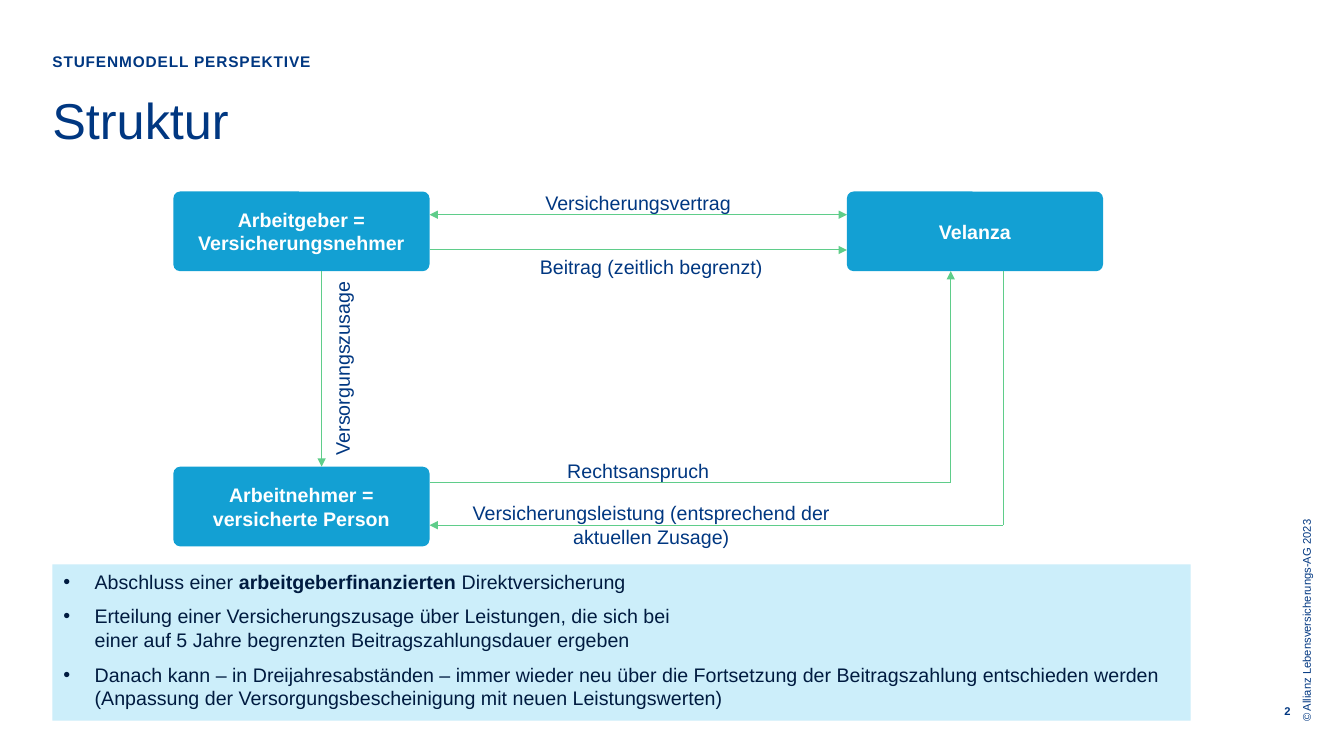
import dataclasses
import lxml.etree
import pptx
import pptx.dml.color
import pptx.enum.shapes
import pptx.enum.text
import pptx.oxml.ns
import pptx.util

Inches = pptx.util.Inches
Pt = pptx.util.Pt
Kind = pptx.enum.shapes.MSO_SHAPE
Align = pptx.enum.text.PP_ALIGN
Anchor = pptx.enum.text.MSO_ANCHOR
qn = pptx.oxml.ns.qn


@dataclasses.dataclass(frozen=True)
class Theme:
    """Colours, font and type sizes of the slide."""
    font: str = "Arial"
    navy: str = "003781"
    ink: str = "001B40"
    white: str = "FFFFFF"
    node: str = "13A0D3"
    pale: str = "CCEEFA"
    line: str = "5FCD8A"
    title: int = 36
    body: int = 14
    kicker: int = 11
    small: int = 8


THEME = Theme()


def rgb(code):
    """Turn a hex code into a colour."""
    return pptx.dml.color.RGBColor.from_string(code)


def bullet(par):
    """Give a paragraph a hanging bullet."""
    props = par._p.get_or_add_pPr()
    props.set("marL", str(Inches(0.32)))
    props.set("indent", str(Inches(-0.31)))
    lxml.etree.SubElement(props, qn("a:buFont")).set("typeface", THEME.font)
    lxml.etree.SubElement(props, qn("a:buChar")).set("char", "•")


def write(shape, text, size=THEME.body, color=THEME.navy, bold=False,
          align=Align.LEFT, anchor=Anchor.TOP, pad=(0.1, 0.05), lead=None,
          space=0, marks=False, track=0):
    """Fill a shape with paragraphs, where ** switches bold and \\v breaks a line."""
    frame = shape.text_frame
    frame.word_wrap = True
    frame.vertical_anchor = anchor
    frame.margin_left = frame.margin_right = Inches(pad[0])
    frame.margin_top = frame.margin_bottom = Inches(pad[1])
    for num, part in enumerate(text.split("\n")):
        par = frame.add_paragraph() if num else frame.paragraphs[0]
        par.alignment = align
        if lead:
            par.line_spacing = Pt(lead)
        if space:
            par.space_after = Pt(space)
            if num:
                par.space_before = Pt(2)
        if marks:
            bullet(par)
        for turn, piece in enumerate(part.split("**")):
            for row, words in enumerate(piece.split("\v")):
                if row:
                    par.add_line_break()
                run = par.add_run()
                run.text = words
                run.font.name = THEME.font
                run.font.size = Pt(size)
                run.font.bold = bold or turn % 2 == 1
                run.font.color.rgb = rgb(color)
                if track:
                    run._r.get_or_add_rPr().set("spc", str(track))


def label(slide, box, text, turn=0, **form):
    """Add a text box."""
    shape = slide.shapes.add_textbox(*map(Inches, box))
    shape.rotation = turn
    write(shape, text, **form)


def panel(slide, box, text, kind, fill, **form):
    """Add a filled shape with text."""
    shape = slide.shapes.add_shape(kind, *map(Inches, box))
    shape.shadow.inherit = False
    shape.fill.solid()
    shape.fill.fore_color.rgb = rgb(fill)
    shape.line.fill.background()
    if kind == Kind.ROUNDED_RECTANGLE:
        shape.adjustments[0] = 0.084
    write(shape, text, **form)


def arrow(slide, start, end, *tips):
    """Draw a line with arrowheads at the named tips."""
    line = slide.shapes.add_connector(
        pptx.enum.shapes.MSO_CONNECTOR.STRAIGHT, *map(Inches, start + end))
    line.line.color.rgb = rgb(THEME.line)
    line.line.width = Pt(0.75)
    stroke = line.line._get_or_add_ln()
    for tip in tips:
        lxml.etree.SubElement(stroke, qn("a:" + tip)).set("type", "triangle")
    lxml.etree.SubElement(line._element.spPr, qn("a:effectLst"))


def header(slide, box):
    """Place the kicker and the title."""
    left, top, width, high = box
    label(slide, (left, top, width, 0.28), "STUFENMODELL PERSPEKTIVE",
          size=THEME.kicker, bold=True, pad=(0, 0), track=60)
    label(slide, (left, top + 0.44, width, high - 0.44), "Struktur",
          size=THEME.title, pad=(0, 0), lead=38)


def graph(slide, box):
    """Place the three parties, their links and the link labels."""
    left, top, width, high = box
    wide, tall = 2.54, 0.79
    edge, far = left + wide, left + width - wide
    base, low = top + tall, top + high - tall
    nodes = (
        (far, top, "Velanza"),
        (left, top, "Arbeitgeber =\nVersicherungsnehmer"),
        (left, low, "Arbeitnehmer =\nversicherte Person"),
    )
    for x, y, text in nodes:
        panel(slide, (x, y, wide, tall), text, Kind.ROUNDED_RECTANGLE,
              THEME.node, color=THEME.white, bold=True, align=Align.CENTER,
              anchor=Anchor.MIDDLE, pad=(0.09, 0.04))

    deal, fee = top + 0.23, top + 0.58
    claim, pay = low + 0.16, low + 0.58
    rise, drop, vow = far + 1.03, far + 1.55, left + 1.47
    arrow(slide, (edge, deal), (far, deal), "headEnd", "tailEnd")
    arrow(slide, (edge, fee), (far, fee), "tailEnd")
    arrow(slide, (vow, base), (vow, low), "tailEnd")
    arrow(slide, (edge, claim), (rise, claim))
    arrow(slide, (rise, claim), (rise, base), "tailEnd")
    arrow(slide, (drop, pay), (drop, base))
    arrow(slide, (edge, pay), (drop, pay), "headEnd")

    gap = far - edge
    labels = (
        ((edge, deal - 0.29, gap, 0.23), 0, "Versicherungsvertrag"),
        ((edge + 0.13, fee, gap, 0.34), 0, "Beitrag (zeitlich begrenzt)"),
        ((edge, claim - 0.29, gap, 0.23), 0, "Rechtsanspruch"),
        ((edge + 0.13, pay - 0.29, gap, 0.57), 0,
         "Versicherungsleistung (entsprechend der aktuellen Zusage)"),
        ((vow - 0.89, (base + low) / 2 - 0.13, 2.1, 0.25), 270,
         "Versorgungszusage"),
    )
    for place, turn, text in labels:
        label(slide, place, text, turn, align=Align.CENTER)


def notes(slide, box):
    """Place the panel of bullet points."""
    text = "\n".join((
        "Abschluss einer **arbeitgeberfinanzierten** Direktversicherung",
        "Erteilung einer Versicherungszusage über Leistungen, die sich bei\v"
        "einer auf 5 Jahre begrenzten Beitragszahlungsdauer ergeben",
        "Danach kann – in Dreijahresabständen – immer wieder neu über die "
        "Fortsetzung der Beitragszahlung entschieden werden (Anpassung der "
        "Versorgungsbescheinigung mit neuen Leistungswerten)",
    ))
    panel(slide, box, text, Kind.RECTANGLE, THEME.pale, color=THEME.ink,
          space=6, marks=True)


def margin(slide, box):
    """Place the page number and the upright copyright line."""
    left, top, width, high = box
    label(slide, (left, top + high - 0.29, 0.29, 0.16), "2", size=THEME.small,
          bold=True, align=Align.RIGHT, anchor=Anchor.MIDDLE, pad=(0, 0),
          lead=10)
    label(slide, (left + width - 0.09 - high / 2, top + high / 2 - 0.09,
                  high, 0.18),
          "© Allianz Lebensversicherungs-AG 2023", 270, size=THEME.small)


def main():
    """Build and save the slide."""
    deck = pptx.Presentation()
    deck.slide_width, deck.slide_height = Inches(13.33), Inches(7.5)
    slide = deck.slides.add_slide(deck.slide_layouts[6])
    header(slide, (0.52, 0.52, 10.2, 1.02))
    graph(slide, (1.72, 1.9, 9.22, 3.52))
    notes(slide, (0.52, 5.6, 11.29, 1.55))
    margin(slide, (12.51, 3.66, 0.51, 3.6))
    deck.save("out.pptx")


if __name__ == "__main__":
    main()
